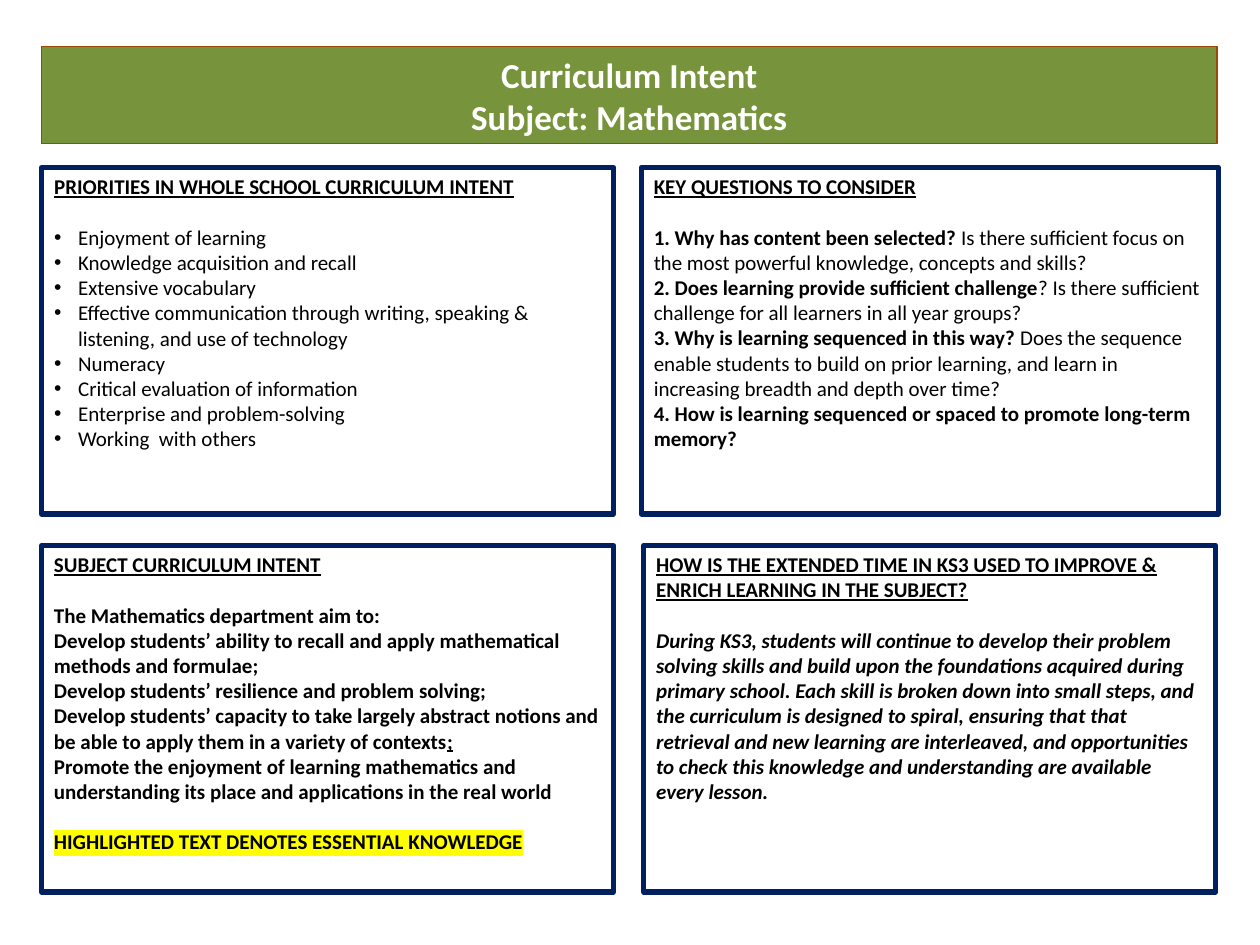
import pptx
import pptx.dml.color
import pptx.enum.shapes
import pptx.enum.text
import pptx.oxml
import pptx.oxml.ns
import pptx.util
from pptx.util import Inches

COLORS = {
    "banner": "77933C",
    "banner line": "984807",
    "panel": "FFFFFF",
    "panel line": "002060",
    "title": "FFFFFF",
    "text": "000000",
    "highlight": "FFFF00",
}
FONT = "Calibri"
HEADING_GAP = 14.4
BULLET_INDENT = Inches(0.19)

LEFT, TOP_ROW, BOTTOM_ROW = 0.33, 1.33, 4.33
PANEL_WIDTH, PANEL_HEIGHT = 4.54, 2.75

PRIORITIES = [
    "Enjoyment of learning",
    "Knowledge acquisition and recall",
    "Extensive vocabulary",
    "Effective communication through writing, speaking & listening, and use of technology",
    "Numeracy",
    "Critical evaluation of information",
    "Enterprise and problem-solving",
    "Working  with others",
]
QUESTIONS = [
    ("1. Why has content been selected? ",
     "Is there sufficient focus on the most powerful knowledge, concepts and skills?"),
    ("2. Does learning provide sufficient challenge",
     "? Is there sufficient challenge for all learners in all year groups?"),
    ("3. Why is learning sequenced in this way? ",
     "Does the sequence enable students to build on prior learning, and learn in "
     "increasing breadth and depth over time?"),
    ("4. How is learning sequenced or spaced to promote long-term memory?", ""),
]
AIMS = [
    ("The Mathematics department aim to:", ""),
    ("Develop students’ ability to recall and apply mathematical methods and formulae;", ""),
    ("Develop students’ resilience and problem solving;", ""),
    ("Develop students’ capacity to take largely abstract notions and be able to apply "
     "them in a variety of contexts", ";"),
    ("Promote the enjoyment of learning mathematics and understanding its place and "
     "applications in the real world", ""),
]
EXTENDED_TIME = (
    "During KS3, students will continue to develop their problem solving skills and build "
    "upon the foundations acquired during primary school. Each skill is broken down into "
    "small steps, and the curriculum is designed to spiral, ensuring that that retrieval and "
    "new learning are interleaved, and opportunities to check this knowledge and "
    "understanding are available every lesson."
)


def rgb(name):
    return pptx.dml.color.RGBColor.from_string(COLORS[name])


def add_run(paragraph, text, size=12, color="text", bold=False, italic=False,
            underline=False, highlight=None):
    run = paragraph.add_run()
    run.text = text
    font = run.font
    font.name, font.size = FONT, pptx.util.Pt(size)
    font.bold, font.italic, font.underline = bold, italic, underline
    font.color.rgb = rgb(color)
    if highlight:
        mark = pptx.oxml.parse_xml(
            f'<a:highlight {pptx.oxml.ns.nsdecls("a")}>'
            f'<a:srgbClr val="{COLORS[highlight]}"/></a:highlight>')
        run._r.rPr.find(pptx.oxml.ns.qn("a:solidFill")).addnext(mark)


class SlideBuilder:
    def __init__(self, slide):
        self.slide = slide

    def frame(self, shape, box, fill, line, line_width, anchor):
        """Place a shape, style it and return its text frame."""
        shape.left, shape.top, shape.width, shape.height = map(Inches, box)
        shape.fill.solid()
        shape.fill.fore_color.rgb = rgb(fill)
        shape.line.color.rgb = rgb(line)
        shape.line.width = pptx.util.Pt(line_width)
        text_frame = shape.text_frame
        text_frame.word_wrap = True
        text_frame.auto_size = pptx.enum.text.MSO_AUTO_SIZE.NONE
        text_frame.vertical_anchor = anchor
        return text_frame

    def paragraph(self, text_frame, bullet=False, align="LEFT", before=0, after=0):
        paragraph = text_frame.paragraphs[0]
        if paragraph.runs:
            paragraph = text_frame.add_paragraph()
        paragraph.alignment = getattr(pptx.enum.text.PP_ALIGN, align)
        paragraph.space_before = pptx.util.Pt(before)
        paragraph.space_after = pptx.util.Pt(after)
        properties = paragraph._p.get_or_add_pPr()
        indent = BULLET_INDENT if bullet else 0
        properties.set("marL", str(indent))
        properties.set("indent", str(-indent))
        mark = 'buChar char="•"' if bullet else "buNone"
        properties.append(pptx.oxml.parse_xml(
            f'<a:{mark} {pptx.oxml.ns.nsdecls("a")}/>'))
        return paragraph

    def banner(self, lines, box):
        text_frame = self.frame(self.slide.shapes.title, box, "banner", "banner line",
                                0.75, pptx.enum.text.MSO_ANCHOR.MIDDLE)
        for line in lines:
            add_run(self.paragraph(text_frame, align="CENTER"), line,
                    size=20, color="title", bold=True)

    def panel(self, heading, left, top, width=PANEL_WIDTH, placeholder=None):
        """Draw a bordered panel with its heading and return its text frame."""
        shape = placeholder
        box = (left, top, width, PANEL_HEIGHT)
        if shape is None:
            shape = self.slide.shapes.add_shape(
                pptx.enum.shapes.MSO_SHAPE.RECTANGLE, *map(Inches, box))
            shape.shadow.inherit = False
        text_frame = self.frame(shape, box, "panel", "panel line", 3,
                                pptx.enum.text.MSO_ANCHOR.TOP)
        add_run(self.paragraph(text_frame, after=HEADING_GAP), heading,
                bold=True, underline=True)
        return text_frame


def main():
    presentation = pptx.Presentation()
    presentation.slide_width, presentation.slide_height = Inches(10), Inches(7.5)
    slide = presentation.slides.add_slide(presentation.slide_layouts[1])
    builder = SlideBuilder(slide)

    builder.banner(["Curriculum Intent", "Subject: Mathematics"], (LEFT, 0.37, 9.33, 0.77))

    priorities = builder.panel("PRIORITIES IN WHOLE SCHOOL CURRICULUM INTENT",
                               LEFT, TOP_ROW, placeholder=slide.placeholders[1])
    for priority in PRIORITIES:
        add_run(builder.paragraph(priorities, bullet=True), priority)

    questions = builder.panel("KEY QUESTIONS TO CONSIDER", 5.09, TOP_ROW, width=4.58)
    for question, detail in QUESTIONS:
        paragraph = builder.paragraph(questions)
        add_run(paragraph, question, bold=True)
        if detail:
            add_run(paragraph, detail)

    intent = builder.panel("SUBJECT CURRICULUM INTENT", LEFT, BOTTOM_ROW)
    for aim, underlined_end in AIMS:
        paragraph = builder.paragraph(intent)
        add_run(paragraph, aim, bold=True)
        if underlined_end:
            add_run(paragraph, underlined_end, bold=True, underline=True)
    add_run(builder.paragraph(intent, before=HEADING_GAP),
            "HIGHLIGHTED TEXT DENOTES ESSENTIAL KNOWLEDGE", bold=True, highlight="highlight")

    extended_time = builder.panel(
        "HOW IS THE EXTENDED TIME IN KS3 USED TO IMPROVE & ENRICH LEARNING IN THE SUBJECT?",
        5.11, BOTTOM_ROW)
    add_run(builder.paragraph(extended_time), EXTENDED_TIME, bold=True, italic=True)

    presentation.save("out.pptx")


if __name__ == "__main__":
    main()
